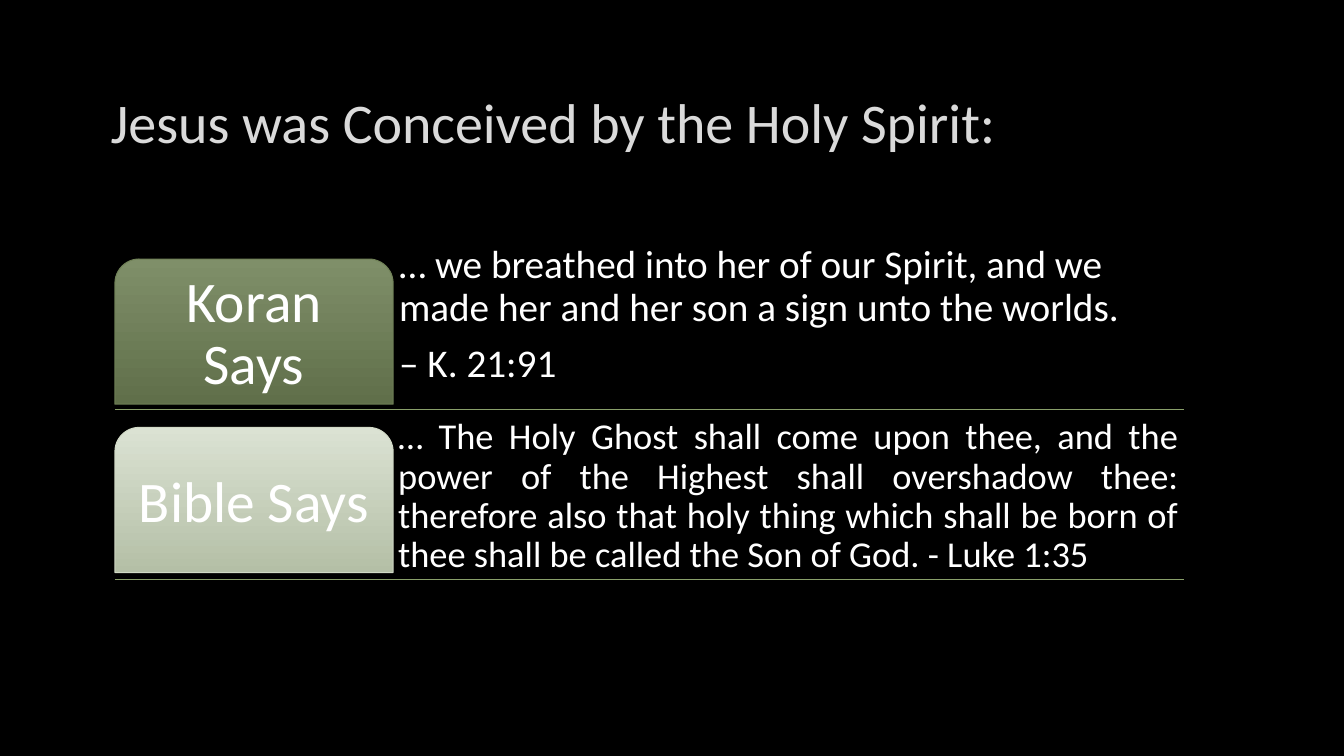
from lxml import etree
from pptx import Presentation
from pptx.dml.color import RGBColor
from pptx.enum.shapes import MSO_CONNECTOR, MSO_SHAPE
from pptx.enum.text import MSO_ANCHOR, PP_ALIGN
from pptx.oxml.ns import qn
from pptx.util import Inches, Pt

TAB = MSO_SHAPE.ROUND_2_SAME_RECTANGLE
STRAIGHT = MSO_CONNECTOR.STRAIGHT
MIDDLE, BOTTOM = MSO_ANCHOR.MIDDLE, MSO_ANCHOR.BOTTOM
LEFT, CENTER, JUSTIFY = PP_ALIGN.LEFT, PP_ALIGN.CENTER, PP_ALIGN.JUSTIFY

TAB_LEFT, TAB_WIDTH, TAB_HEIGHT = 8.55, 20.7, 19.2
FIRST_TAB_TOP, TAB_PITCH = 34.27, 22.27
QUOTE_LEFT, QUOTE_WIDTH = 29.25, 58.88

SAYINGS = [
    {
        "label": "Koran Says",
        "gradient": ("7F8F69", "606F4A"),
        "outline": "708157",
        "quote": [
            "… we breathed into her of our Spirit, and we made her and her son a sign unto the worlds.",
            "– K. 21:91",
        ],
        "quote_top": 36.27,
        "quote_height": 15.6,
        "rule_top": 54.13,
        "format": {"size": 28, "inset": 0.06, "align": LEFT},
    },
    {
        "label": "Bible Says",
        "gradient": ("DBE2D3", "B4BFA6"),
        "outline": "D1D9C6",
        "quote": [
            "… The Holy Ghost shall come upon thee, and the power of the Highest shall overshadow thee: "
            "therefore also that holy thing which shall be born of thee shall be called the Son of God. - Luke 1:35",
        ],
        "quote_top": 57.6,
        "quote_height": 19.2,
        "rule_top": 76.67,
        "format": {"size": 26, "inset": 0.05, "align": JUSTIFY},
    },
]


def color(value):
    return RGBColor.from_string(value)


def apply(target, values):
    for name, value in values.items():
        setattr(target, name, value)


class SlideBuilder:
    font_name = "Calibri"
    text_color = "FFFFFF"
    rule_color = "899F6A"
    line_width = Pt(0.75)

    def __init__(self, presentation, background):
        self.unit_x = presentation.slide_width / 100
        self.unit_y = presentation.slide_height / 100
        self.slide = presentation.slides.add_slide(presentation.slide_layouts[6])
        fill = self.slide.background.fill
        fill.solid()
        fill.fore_color.rgb = color(background)

    def place(self, left, top, width, height):
        return (round(left * self.unit_x), round(top * self.unit_y),
                round(width * self.unit_x), round(height * self.unit_y))

    def fill_text(self, shape, texts, size, inset, align, anchor, spacing=0.9, text_color=None):
        frame = shape.text_frame
        margins = ("margin_left", "margin_top", "margin_right", "margin_bottom")
        apply(frame, {"word_wrap": True, "vertical_anchor": anchor,
                      **dict.fromkeys(margins, Inches(inset))})
        for index, text in enumerate(texts):
            paragraph = frame.add_paragraph() if index else frame.paragraphs[0]
            paragraph.text = text
            apply(paragraph, {"alignment": align, "line_spacing": spacing})
            if index:
                paragraph.space_before = Pt(10)
            apply(paragraph.font, {"name": self.font_name, "size": Pt(size)})
            paragraph.font.color.rgb = color(text_color or self.text_color)

    def text(self, box, texts, **style):
        self.fill_text(self.slide.shapes.add_textbox(*self.place(*box)), texts, **style)

    def tab(self, box, label, gradient, outline):
        shape = self.slide.shapes.add_shape(TAB, *self.place(*box))
        shape.shadow.inherit = False
        shape.adjustments[0] = 0.167
        shape.adjustments[1] = 0
        shape.fill.gradient()
        shape.fill.gradient_angle = 270
        for stop, position, value in zip(shape.fill.gradient_stops, (0, 1), gradient):
            stop.position = position
            stop.color.rgb = color(value)
        shape.line.color.rgb = color(outline)
        shape.line.width = self.line_width
        self.fill_text(shape, [label], size=41, inset=0.09, align=CENTER, anchor=MIDDLE)

    def rule(self, left, top, width):
        x, y, length, _ = self.place(left, top, width, 0)
        line = self.slide.shapes.add_connector(STRAIGHT, x, y, x + length, y)
        line.line.color.rgb = color(self.rule_color)
        line.line.width = self.line_width
        etree.SubElement(line._element.spPr, qn("a:effectLst"))


def main():
    presentation = Presentation()
    apply(presentation, {"slide_width": Inches(13.33), "slide_height": Inches(7.5)})
    builder = SlideBuilder(presentation, "000000")
    builder.text((7.5, 8.93, 84.9, 14.13), ["Jesus was Conceived by the Holy Spirit:"],
                 size=40, inset=0.1, align=LEFT, anchor=MIDDLE, spacing=1.0, text_color="DADADA")
    for index, saying in enumerate(SAYINGS):
        builder.rule(TAB_LEFT, saying["rule_top"], QUOTE_LEFT + QUOTE_WIDTH - TAB_LEFT)
        builder.text((QUOTE_LEFT, saying["quote_top"], QUOTE_WIDTH, saying["quote_height"]),
                     saying["quote"], anchor=BOTTOM, **saying["format"])
        builder.tab((TAB_LEFT, FIRST_TAB_TOP + index * TAB_PITCH, TAB_WIDTH, TAB_HEIGHT),
                    saying["label"], saying["gradient"], saying["outline"])
    presentation.save("out.pptx")


if __name__ == "__main__":
    main()
